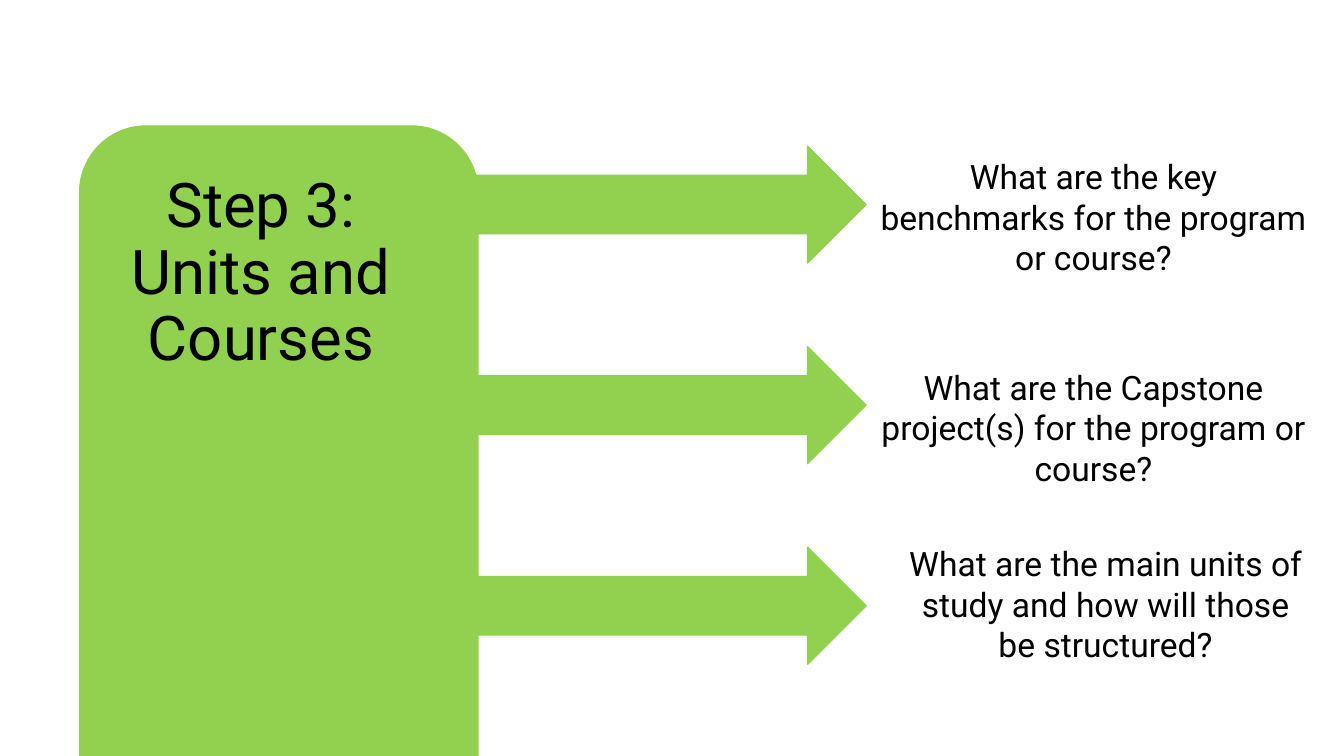
from pptx import Presentation
from pptx.dml.color import RGBColor
from pptx.enum.shapes import MSO_SHAPE as Shape
from pptx.enum.text import MSO_ANCHOR as Anchor, MSO_AUTO_SIZE as AutoSize, PP_ALIGN as Align
from pptx.util import Pt

PX = 9144  # 100 px to the inch
GREEN = RGBColor(0x92, 0xD0, 0x50)
BLACK = RGBColor(0x00, 0x00, 0x00)


def write(box, text, size, spacing=1.0, fit=AutoSize.NONE):
    frame = box.text_frame
    frame.word_wrap = True
    frame.auto_size = fit
    frame.vertical_anchor = Anchor.TOP
    paragraph = frame.paragraphs[0]
    paragraph.alignment = Align.CENTER
    paragraph.line_spacing = spacing
    run = paragraph.add_run()
    run.text = text
    run.font.name = "Roboto"
    run.font.size = Pt(size)
    run.font.color.rgb = BLACK


def add_green(kind, left, top, width, height):
    green = slide.shapes.add_shape(kind, left * PX, top * PX, width * PX, height * PX)
    green.shadow.inherit = False
    green.fill.solid()
    green.fill.fore_color.rgb = GREEN
    green.line.color.rgb = GREEN
    green.line.width = Pt(1)
    return green


deck = Presentation()
deck.slide_width, deck.slide_height = 1333 * PX, 750 * PX
slide = deck.slides.add_slide(deck.slide_layouts[5])

# Step panel with the title in front of it
step_panel = add_green(Shape.ROUNDED_RECTANGLE, 79, 125, 395, 751)
step_title = slide.shapes.title
step_title.left, step_title.top = 104 * PX, 168 * PX
step_title.width, step_title.height = 310 * PX, 145 * PX
write(step_title, "Step 3: Units and Courses", size=44, spacing=0.9)
step_panel._element.addnext(step_title._element)

# Evenly spaced arrows, each leading to a question
RIGHT_EDGE = 1309
questions = [
    ("What are the key benchmarks for the program or course?", 860, 150, 131),
    ("What are the Capstone project(s) for the program or course?", 860, 359, 131),
    ("What are the main units of study and how will those be structured?", 884, 534, 172),
]
for row, (question, left, top, height) in enumerate(questions):
    add_green(Shape.RIGHT_ARROW, 398, 145 + row * 199, 461, 116)
    question_box = slide.shapes.add_textbox(
        left * PX, top * PX, (RIGHT_EDGE - left) * PX, height * PX)
    write(question_box, question, size=24, fit=AutoSize.SHAPE_TO_FIT_TEXT)

deck.save("out.pptx")
